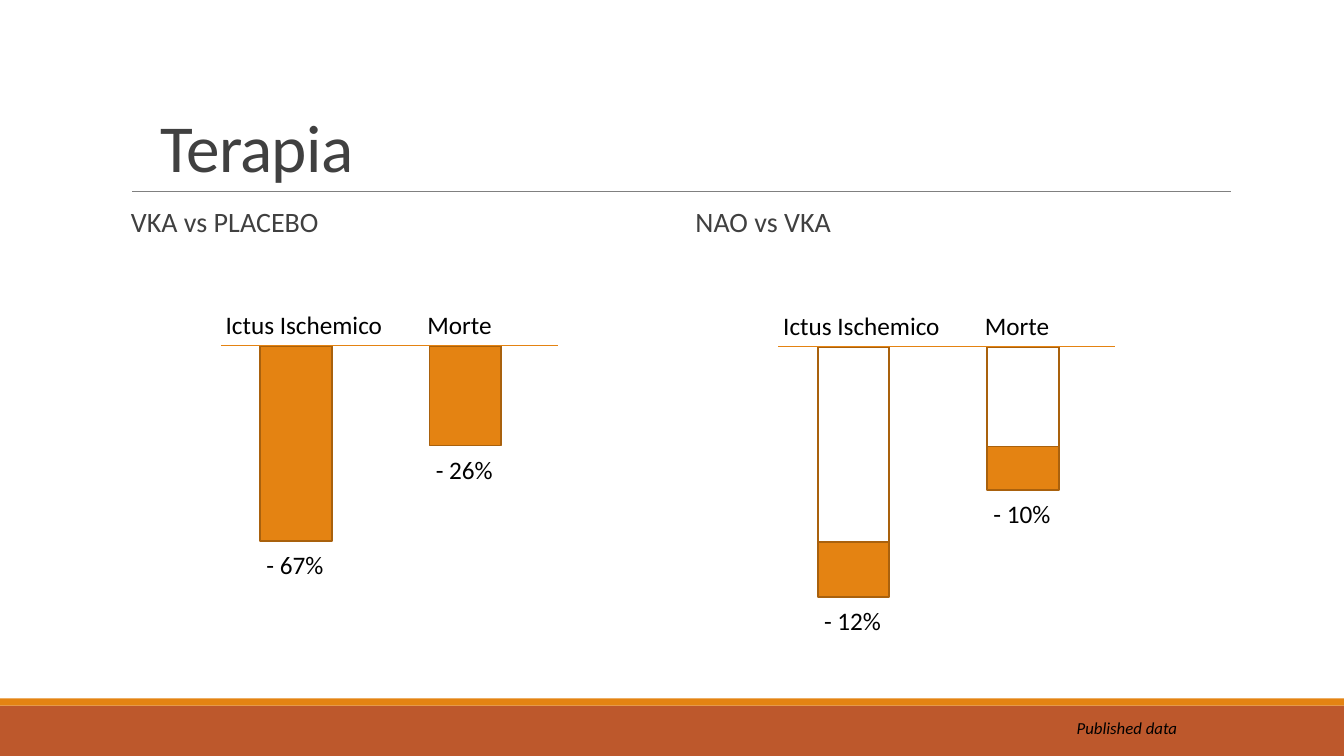
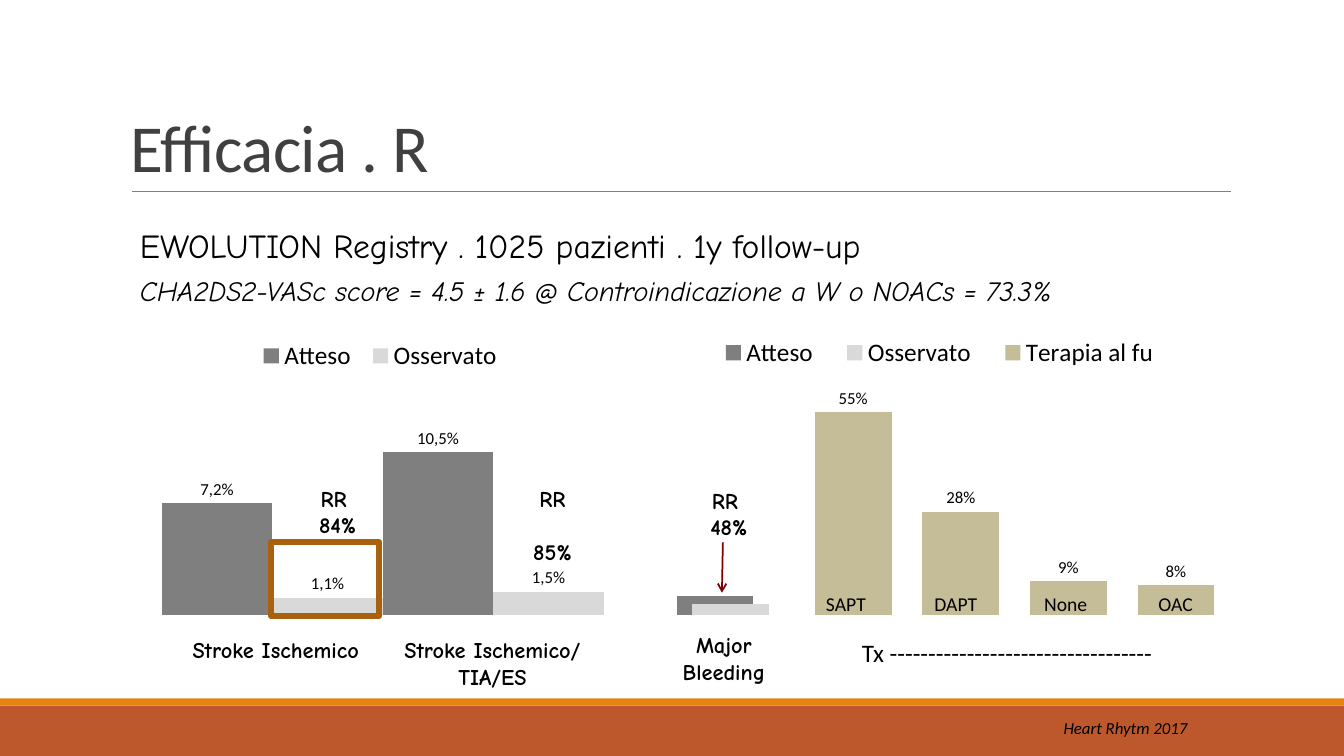
from dataclasses import dataclass
from typing import Optional

from lxml.etree import SubElement
from pptx import Presentation
from pptx.chart.data import CategoryChartData
from pptx.dml.color import RGBColor
from pptx.enum.chart import XL_CHART_TYPE, XL_LABEL_POSITION, XL_LEGEND_POSITION
from pptx.enum.shapes import MSO_CONNECTOR, MSO_SHAPE
from pptx.enum.text import MSO_ANCHOR, PP_ALIGN
from pptx.oxml import parse_xml
from pptx.oxml.ns import nsdecls, qn
from pptx.util import Inches, Pt

COLORS = {
    "band": "BD582C", "accent": "E48312", "edge": "A9610D", "rule": "808080",
    "title": "404040", "text": "000000", "white": "FFFFFF", "arrow": "800000",
    "expected": "7F7F7F", "observed": "D9D9D9", "therapy": "C4BD97",
}
BODY_FONT, NOTE_FONT = "Calibri", "Comic Neue"
COLS, ROWS = 133.3, 75  # grid of tenth-of-an-inch cells


@dataclass
class Box:
    """A place on the grid: left and width in columns, top and height in rows."""
    left: float
    top: float
    width: float
    height: float


@dataclass
class Style:
    size: float = 18
    font: str = BODY_FONT
    color: str = "text"
    bold: bool = False
    italic: bool = False
    align: PP_ALIGN = PP_ALIGN.LEFT


@dataclass
class Bar:
    offset: float
    hollow: float
    solid: float
    label: str


@dataclass
class Panel:
    heading: str
    heading_left: float
    left: float
    baseline: float
    bars: list[Bar]


@dataclass
class Series:
    name: str
    color: str
    values: list[Optional[float]]
    labels: Optional[list[str]] = None
    number_format: Optional[str] = None


@dataclass
class ColumnChart:
    box: Box
    categories: list[str]
    series: list[Series]
    maximum: float
    overlap: int
    plot: tuple[float, float, float, float]
    legend: tuple[float, float, float, float]


NOTE = Style(16, NOTE_FONT, bold=True, align=PP_ALIGN.CENTER)


def cell(count: float) -> int:
    return Inches(count / 10)


def place(box: Box) -> tuple[int, ...]:
    return tuple(cell(n) for n in (box.left, box.top, box.width, box.height))


def rgb(name: str) -> RGBColor:
    return RGBColor.from_string(COLORS[name])


def add_block(slide, box: Box, fill: Optional[str] = None,
              edge: Optional[str] = None, weight: float = 1.25) -> None:
    block = slide.shapes.add_shape(MSO_SHAPE.RECTANGLE, *place(box))
    block.shadow.inherit = False
    if fill:
        block.fill.solid()
        block.fill.fore_color.rgb = rgb(fill)
    else:
        block.fill.background()
    if edge:
        block.line.color.rgb = rgb(edge)
        block.line.width = Pt(weight)
    else:
        block.line.fill.background()


def add_line(slide, start: tuple[float, float], end: tuple[float, float],
             color: str, weight: float, arrow: bool = False) -> None:
    line = slide.shapes.add_connector(
        MSO_CONNECTOR.STRAIGHT, *(cell(n) for n in (*start, *end)))
    line.line.color.rgb = rgb(color)
    line.line.width = Pt(weight)
    if arrow:
        SubElement(line.line._get_or_add_ln(), qn("a:tailEnd"), type="arrow")
    SubElement(line._element.spPr, qn("a:effectLst"))


def style_paragraph(paragraph, style: Style) -> None:
    paragraph.alignment = style.align
    for run in paragraph.runs:
        font = run.font
        font.size, font.name = Pt(style.size), style.font
        font.bold, font.italic = style.bold, style.italic
        font.color.rgb = rgb(style.color)


def add_text(slide, box: Box, text: str, style: Style, fill: Optional[str] = None):
    area = slide.shapes.add_textbox(*place(box))
    if fill:
        area.fill.solid()
        area.fill.fore_color.rgb = rgb(fill)
    frame = area.text_frame
    frame.word_wrap = True
    frame.text = text
    for paragraph in frame.paragraphs:
        style_paragraph(paragraph, style)
    return frame


def add_frame(prs, title: str, source: str, source_left: float, indent: float = 1):
    """Blank slide with bands, title, rule and source line."""
    slide = prs.slides.add_slide(prs.slide_layouts[6])
    add_block(slide, Box(0, 70, COLS, 5), "band")
    add_block(slide, Box(0, 69.3, COLS, 0.7), "accent")
    add_line(slide, (13.1, 19), (122.1, 19), "rule", 0.5)
    heading = add_text(slide, Box(12, 3.1, 110, 15.9), title, Style(48, color="title"))
    heading.vertical_anchor = MSO_ANCHOR.BOTTOM
    heading.margin_left = cell(indent)
    heading.paragraphs[0].line_spacing = 0.85
    heading.paragraphs[0].runs[0].font._element.set("spc", "-50")
    add_text(slide, Box(source_left, 70.7, 16, 3), source, Style(12, italic=True))
    return slide


def add_panel(slide, panel: Panel) -> None:
    """Bars hanging from a baseline, each with its reduction below."""
    heading = add_text(slide, Box(panel.heading_left, 20.2, 54, 5),
                       panel.heading, Style(20, color="title"))
    heading.paragraphs[0].line_spacing = 0.9
    for bar in panel.bars:
        left, top = panel.left + bar.offset, panel.baseline
        if bar.hollow:
            add_block(slide, Box(left, top, 7.1, bar.hollow), edge="edge")
        top += bar.hollow
        add_block(slide, Box(left, top, 7.1, bar.solid), "accent", "edge")
        add_text(slide, Box(left - 0.35, top + bar.solid + 0.35, 9, 4), bar.label, Style())
    add_line(slide, (panel.left, panel.baseline),
             (panel.left + 33.4, panel.baseline), "accent", 1)
    add_text(slide, Box(panel.left - 0.5, panel.baseline - 4.15, 31, 4),
             "Ictus Ischemico\tMorte", Style())


def manual_layout(shares: tuple[float, ...], inner: bool = False):
    target = '<c:layoutTarget val="inner"/>' if inner else ""
    modes = "".join(f'<c:{axis}Mode val="edge"/>' for axis in "xy")
    sizes = "".join(f'<c:{key} val="{share}"/>' for key, share in zip("xywh", shares))
    return parse_xml(f'<c:layout {nsdecls("c")}><c:manualLayout>{target}{modes}{sizes}'
                     "</c:manualLayout></c:layout>")


def add_chart(slide, design: ColumnChart) -> None:
    data = CategoryChartData()
    data.categories = design.categories
    for item in design.series:
        data.add_series(item.name, item.values)
    chart = slide.shapes.add_chart(
        XL_CHART_TYPE.COLUMN_CLUSTERED, *place(design.box), data).chart
    chart.has_title = False
    chart.font.size, chart.font.name = Pt(18), BODY_FONT
    chart.font.color.rgb = rgb("text")

    # Hidden axes
    chart.value_axis.minimum_scale = 0
    chart.value_axis.maximum_scale = design.maximum
    chart.value_axis.has_major_gridlines = False
    chart.value_axis.visible = chart.category_axis.visible = False

    # Legend and plot area
    chart.has_legend = True
    chart.legend.position = XL_LEGEND_POSITION.TOP
    chart.legend.include_in_layout = True
    chart.legend._element.find(qn("c:legendPos")).addnext(manual_layout(design.legend))
    area = chart._chartSpace.find(qn("c:chart")).find(qn("c:plotArea"))
    for old in area.findall(qn("c:layout")):
        area.remove(old)
    area.insert(0, manual_layout(design.plot, inner=True))

    # Columns and their labels
    plot = chart.plots[0]
    plot.gap_width, plot.overlap, plot.vary_by_categories = 0, design.overlap, False
    for column, item in zip(plot.series, design.series):
        column.format.fill.solid()
        column.format.fill.fore_color.rgb = rgb(item.color)
        column.invert_if_negative = False
        if item.number_format:
            labels = column.data_labels
            labels.show_value = True
            labels.number_format = item.number_format
            labels.number_format_is_linked = False
            labels.position = XL_LABEL_POSITION.OUTSIDE_END
            labels.font.size = Pt(12)
        for index, text in enumerate(item.labels or []):
            label = column.points[index].data_label
            label.text_frame.text = text
            label.position = XL_LABEL_POSITION.OUTSIDE_END
            style_paragraph(label.text_frame.paragraphs[0],
                            Style(12, align=PP_ALIGN.CENTER))


def therapy_slide(prs) -> None:
    slide = add_frame(prs, "Terapia", "Published data", 105.8, indent=3.9)
    add_panel(slide, Panel("VKA vs PLACEBO", 12, 21.9, 34.3, [
        Bar(3.9, 0, 19.4, "- 67%"), Bar(20.7, 0, 9.9, "- 26%")]))
    add_panel(slide, Panel("NAO vs VKA", 68, 77.2, 34.4, [
        Bar(3.9, 19.4, 5.4, "- 12%"), Bar(20.7, 9.9, 4.3, "- 10%")]))


def efficacy_slide(prs) -> None:
    slide = add_frame(prs, "Efficacia . R", "Heart Rhytm 2017", 104.5)
    therapies = ["SAPT", "DAPT", "None", "OAC"]
    gap = [None] * len(therapies)
    add_chart(slide, ColumnChart(
        Box(14.4, 29.7, 47.1, 36.2), ["1", "2"],
        [Series("Atteso", "expected", [0.072, 0.105], ["7,2%", "10,5%"], "0.00%"),
         Series("Osservato", "observed", [0.011, 0.015], ["1,1%", "1,5%"], "0.00%")],
        0.12, 0, (0.035, 0.356, 0.931, 0.509), (0.22, 0.1, 0.55, 0.11)))
    add_chart(slide, ColumnChart(
        Box(65.1, 29.8, 57.3, 38.5), ["Major Bleed", *therapies],
        [Series("Atteso", "expected", [0.05, *gap]),
         Series("Osservato", "observed", [0.03, *gap]),
         Series("Terapia al fu", "therapy", [None, 0.55, 0.28, 0.09, 0.08],
                number_format="0%")],
        0.6, 80, (0.035, 0.241, 0.931, 0.569), (0.075, 0.08, 0.83, 0.11)))

    # Therapy names at the foot of the columns
    for index, therapy in enumerate(therapies):
        add_text(slide, Box(78.9 + 10.9 * index, 58.25, 10, 3.4), therapy,
                 Style(14, align=PP_ALIGN.CENTER))

    # Study and population
    study = add_text(
        slide, Box(12.9, 21.8, 109.4, 9.3),
        "EWOLUTION Registry . 1025 pazienti . 1y follow-up\n"
        "CHA2DS2-VASc score = 4.5 ± 1.6 @ Controindicazione a W o NOACs = 73.3%",
        Style(24, NOTE_FONT))
    style_paragraph(study.paragraphs[1], Style(20, NOTE_FONT, italic=True))
    for paragraph in study.paragraphs:
        paragraph.space_after = Pt(6)

    # Risk reductions
    for left, top, reduction, space in ((28.3, 47.6, " 84%", 0), (50, 47.6, "85%", 19),
                                        (67.1, 47.8, " 48%", 0)):
        risk = add_text(slide, Box(left, top, 9.6, 6.4), f"RR\n{reduction}", NOTE)
        risk.paragraphs[1].space_before = Pt(space)
    add_line(slide, (71.7, 53.8), (71.6, 58.8), "arrow", 1.25, arrow=True)

    # Outcome names
    for box, outcome in ((Box(16.2, 62.6, 22.3, 3.7), "Stroke Ischemico"),
                         (Box(65.8, 62.1, 12, 6.4), "Major\nBleeding"),
                         (Box(37.7, 62.6, 22.3, 6.4), "Stroke Ischemico/ TIA/ES")):
        add_text(slide, box, outcome, NOTE, "white")
    add_text(slide, Box(84.5, 62.7, 33, 4), "Tx ----------------------------------", Style())
    add_block(slide, Box(26.9, 53.8, 10.7, 7.3), edge="edge", weight=4.5)


def main() -> None:
    prs = Presentation()
    prs.slide_width, prs.slide_height = cell(COLS), cell(ROWS)
    therapy_slide(prs)
    efficacy_slide(prs)
    prs.save("out.pptx")


if __name__ == "__main__":
    main()
